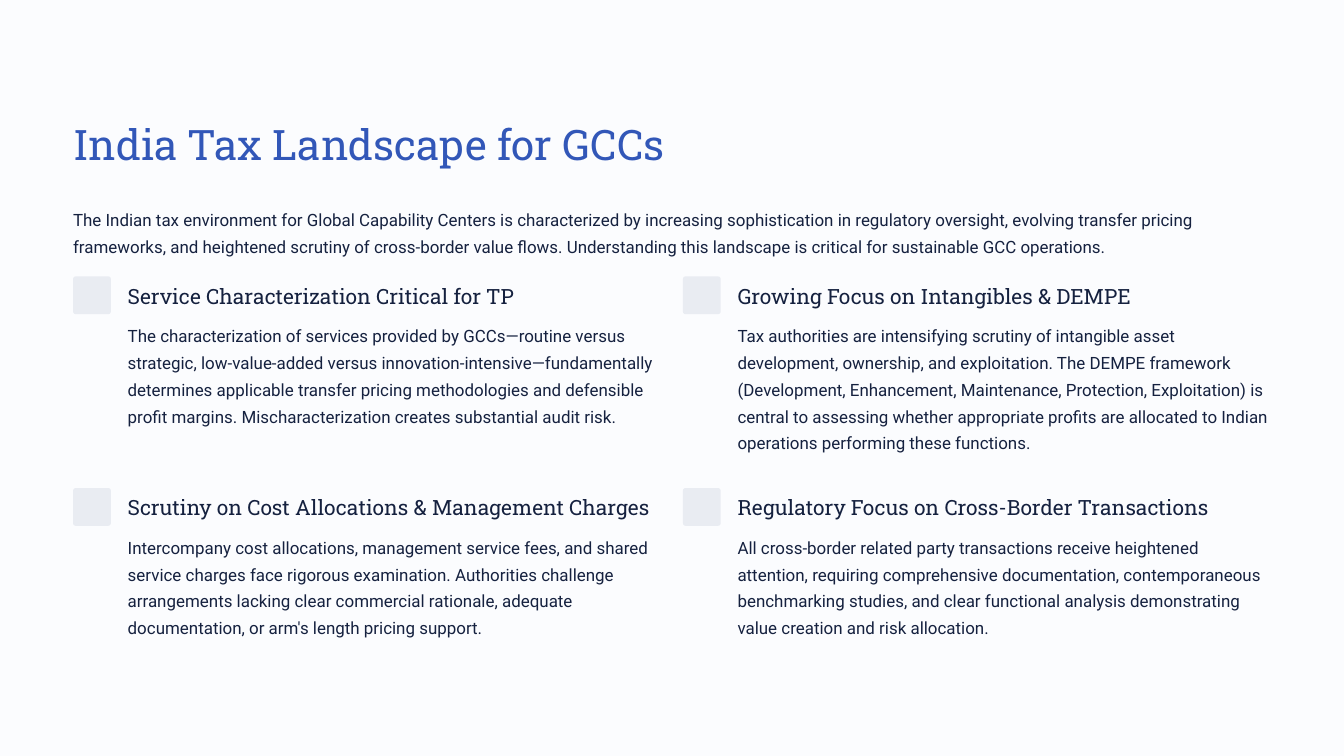
import pptx
import pptx.dml.color
import pptx.enum.shapes
import pptx.enum.text
import pptx.util

SLIDE_WIDTH, SLIDE_HEIGHT = 16, 9
MARGIN = 0.87
CONTENT_WIDTH = SLIDE_WIDTH - 2 * MARGIN
COLUMNS = 2
GUTTER = 0.26
COLUMN_WIDTH = (CONTENT_WIDTH - GUTTER * (COLUMNS - 1)) / COLUMNS
GRID_TOP, ROW_PITCH, ROW_HEIGHT = 3.29, 2.52, 2.12
MARKER_SIZE, TEXT_INDENT = 0.45, 0.65

BACKGROUND, BLUE, NAVY, PALE = "FBFCFE", "3257B8", "15213F", "E9ECF2"
HEADING_FONT, BODY_FONT = "Roboto Slab", "Roboto"

TITLE = "India Tax Landscape for GCCs"
INTRO = (
    "The Indian tax environment for Global Capability Centers is characterized by increasing "
    "sophistication in regulatory oversight, evolving transfer pricing frameworks, and heightened "
    "scrutiny of cross-border value flows. Understanding this landscape is critical for "
    "sustainable GCC operations."
)
TOPICS = [
    (
        "Service Characterization Critical for TP",
        "The characterization of services provided by GCCs—routine versus strategic, "
        "low-value-added versus innovation-intensive—fundamentally determines applicable transfer "
        "pricing methodologies and defensible profit margins. Mischaracterization creates "
        "substantial audit risk.",
    ),
    (
        "Growing Focus on Intangibles & DEMPE",
        "Tax authorities are intensifying scrutiny of intangible asset development, ownership, and "
        "exploitation. The DEMPE framework (Development, Enhancement, Maintenance, Protection, "
        "Exploitation) is central to assessing whether appropriate profits are allocated to Indian "
        "operations performing these functions.",
    ),
    (
        "Scrutiny on Cost Allocations & Management Charges",
        "Intercompany cost allocations, management service fees, and shared service charges face "
        "rigorous examination. Authorities challenge arrangements lacking clear commercial "
        "rationale, adequate documentation, or arm's length pricing support.",
    ),
    (
        "Regulatory Focus on Cross-Border Transactions",
        "All cross-border related party transactions receive heightened attention, requiring "
        "comprehensive documentation, contemporaneous benchmarking studies, and clear functional "
        "analysis demonstrating value creation and risk allocation.",
    ),
]


def paint(fill, color):
    fill.solid()
    fill.fore_color.rgb = pptx.dml.color.RGBColor.from_string(color)


def inches(*lengths):
    return [pptx.util.Inches(length) for length in lengths]


def write(slide, text, box, holder=None, font=BODY_FONT, size=14.5, color=NAVY, leading=23, wrap=True):
    if holder is None:
        holder = slide.shapes.add_textbox(*inches(*box))
    else:
        holder.left, holder.top, holder.width, holder.height = inches(*box)
    frame = holder.text_frame
    frame.margin_left = frame.margin_top = frame.margin_right = frame.margin_bottom = 0
    frame.auto_size = pptx.enum.text.MSO_AUTO_SIZE.NONE
    frame.vertical_anchor = pptx.enum.text.MSO_ANCHOR.TOP
    frame.word_wrap = wrap
    frame.text = text
    paragraph = frame.paragraphs[0]
    paragraph.alignment = pptx.enum.text.PP_ALIGN.LEFT
    paragraph.line_spacing = pptx.util.Pt(leading)
    run_font = paragraph.runs[0].font
    run_font.name = font
    run_font.size = pptx.util.Pt(size)
    paint(run_font.fill, color)


def add_header(slide, left, top, width):
    write(slide, TITLE, (left, top, width, 0.63), holder=slide.shapes.title,
          font=HEADING_FONT, size=36, color=BLUE, leading=45, wrap=False)
    write(slide, INTRO, (left, top + 1.03, width, 0.64))


def add_topic(slide, heading, description, left, top, width, height):
    marker = slide.shapes.add_shape(
        pptx.enum.shapes.MSO_SHAPE.ROUNDED_RECTANGLE,
        *inches(left, top, MARKER_SIZE, MARKER_SIZE))
    marker.adjustments[0] = 0.07
    marker.shadow.inherit = False
    paint(marker.fill, PALE)
    marker.line.fill.background()
    text_left, text_width = left + TEXT_INDENT, width - TEXT_INDENT
    write(slide, heading, (text_left, top + 0.07, text_width, 0.31),
          font=HEADING_FONT, size=18, leading=22.5, wrap=False)
    write(slide, description, (text_left, top + 0.51, text_width, height - 0.51))


def add_topic_grid(slide, left, top):
    for index, (heading, description) in enumerate(TOPICS):
        row, column = divmod(index, COLUMNS)
        add_topic(slide, heading, description,
                  left + column * (COLUMN_WIDTH + GUTTER), top + row * ROW_PITCH,
                  COLUMN_WIDTH, ROW_HEIGHT)


def main():
    deck = pptx.Presentation()
    deck.slide_width, deck.slide_height = inches(SLIDE_WIDTH, SLIDE_HEIGHT)
    slide = deck.slides.add_slide(deck.slide_layouts.get_by_name("Title Only"))
    paint(slide.background.fill, BACKGROUND)
    add_header(slide, MARGIN, 1.39, CONTENT_WIDTH)
    add_topic_grid(slide, MARGIN, GRID_TOP)
    deck.save("out.pptx")


if __name__ == "__main__":
    main()
